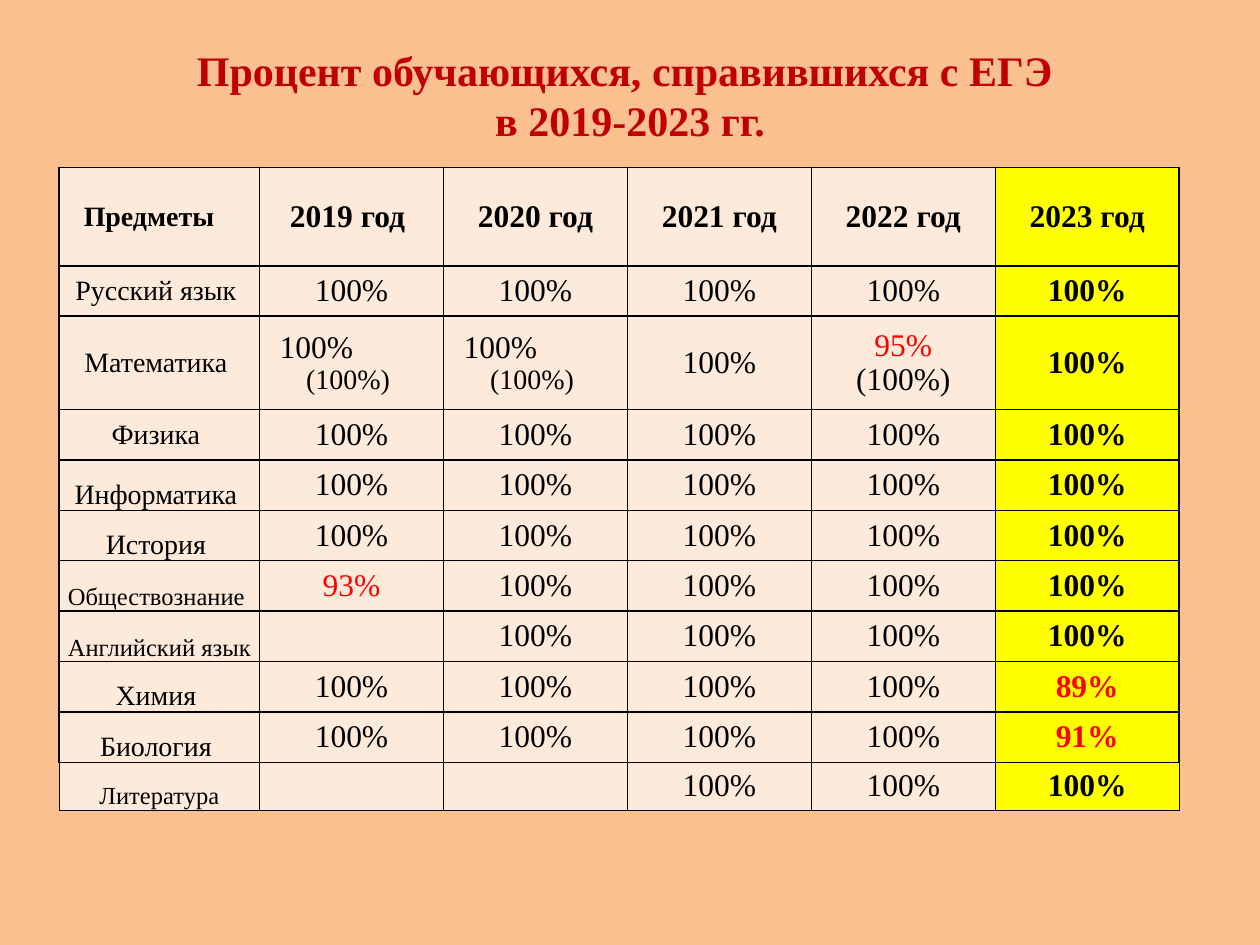
from lxml import etree
from pptx import Presentation, util as u
from pptx.dml.color import RGBColor
from pptx.enum import text
from pptx.oxml import ns

FONT = "Times New Roman"
COLORS = {"background": "FAC090", "title": "C00000", "cell": "FDEADA",
          "latest": "FFFF00", "text": "000000", "alert": "FF0000"}

# Content
TITLE = "Процент обучающихся, справившихся с ЕГЭ \vв 2019-2023 гг."
HEADER = ["Предметы ", "2019 год ", "2020 год", "2021 год", "2022 год", "2023 год"]
FULL = "100%"
STEPPED = "100%\v(100%)"  # second line stands further right, in smaller type
RESULTS = [
    ("Русский язык ", [FULL] * 5),
    ("Математика ", [STEPPED, STEPPED, FULL, "95%\n(100%)", FULL]),
    ("Физика ", [FULL] * 5),
    ("Информатика ", [FULL] * 5),
    ("История ", [FULL] * 5),
    ("Обществознание ", ["93%"] + [FULL] * 4),
    ("Английский язык", [""] + [FULL] * 4),
    ("Химия ", [FULL] * 4 + ["89%"]),
    ("Биология ", [FULL] * 4 + ["91%"]),
    ("Литература", ["", ""] + [FULL] * 3),
]
SMALL_LABELS = {"Обществознание ", "Английский язык", "Литература"}
ALERTS = {"95%", "93%", "89%", "91%"}
FIRST_BOTTOM_ROW = 4  # labels sit on the cell floor from here on

# Grid, in inches
TABLE_LEFT, TABLE_TOP = 0.47, 1.33
COLUMNS = [1.59] + [1.46] * 5
ROWS = [0.78, 0.4, 0.74] + [0.4] * 7 + [0.38]


def color(name):
    return RGBColor.from_string(COLORS[name])


def set_font(font, size, bold, name):
    font.name, font.size, font.bold = FONT, u.Pt(size), bold
    font.color.rgb = color(name)


def add_borders(cell, is_last_row):
    properties = cell._tc.get_or_add_tcPr()
    for side in "LRTB":
        width = 0.5 if is_last_row and side != "T" else 1
        line = etree.SubElement(properties, ns.qn(f"a:ln{side}"), w=str(u.Pt(width)))
        fill = etree.SubElement(line, ns.qn("a:solidFill"))
        etree.SubElement(fill, ns.qn("a:srgbClr"), val=COLORS["text"])


def write_cell(cell, value, size, bold):
    cell.text = value
    for paragraph in cell.text_frame.paragraphs:
        paragraph.alignment = text.PP_ALIGN.CENTER
        name = "alert" if paragraph.text in ALERTS else "text"
        set_font(paragraph.font, size, bold, name)
    if value == STEPPED:
        paragraph = cell.text_frame.paragraphs[0]
        paragraph.alignment = text.PP_ALIGN.LEFT
        indents = paragraph._p.get_or_add_pPr()
        indents.set("marL", str(u.Inches(0.37)))
        indents.set("indent", str(u.Inches(-0.21)))
        paragraph.runs[1].font.size = u.Pt(16)


# Slide
presentation = Presentation()
presentation.slide_width, presentation.slide_height = u.Inches(10), u.Inches(7.5)
slide = presentation.slides.add_slide(presentation.slide_layouts[6])
slide.background.fill.solid()
slide.background.fill.fore_color.rgb = color("background")

# Title
title = slide.shapes.add_textbox(u.Inches(0.5), u.Inches(0.16), u.Inches(9), u.Inches(1.18))
frame = title.text_frame
frame.word_wrap = True
frame.vertical_anchor = text.MSO_ANCHOR.MIDDLE
frame.text = TITLE
frame.paragraphs[0].alignment = text.PP_ALIGN.CENTER
set_font(frame.paragraphs[0].font, 24, True, "title")

# Results table
table = slide.shapes.add_table(
    len(ROWS), len(COLUMNS), u.Inches(TABLE_LEFT), u.Inches(TABLE_TOP),
    u.Inches(sum(COLUMNS)), u.Inches(sum(ROWS))).table
for column, width in zip(table.columns, COLUMNS):
    column.width = u.Inches(width)
for row, height in zip(table.rows, ROWS):
    row.height = u.Inches(height)

last_row, last_column = len(ROWS) - 1, len(COLUMNS) - 1
for r, values in enumerate([HEADER] + [[label, *marks] for label, marks in RESULTS]):
    for c, value in enumerate(values):
        cell = table.cell(r, c)
        cell.margin_left = cell.margin_right = cell.margin_top = cell.margin_bottom = 0
        on_floor = c == 0 and r >= FIRST_BOTTOM_ROW
        cell.vertical_anchor = text.MSO_ANCHOR.BOTTOM if on_floor else text.MSO_ANCHOR.MIDDLE
        add_borders(cell, r == last_row)
        cell.fill.solid()
        cell.fill.fore_color.rgb = color("latest" if c == last_column else "cell")
        size = 18 if c else 14 if value in SMALL_LABELS else 16
        write_cell(cell, value, size, r == 0 or c == last_column)
table.cell(0, 0).margin_right = u.Inches(0.11)

presentation.save("out.pptx")
